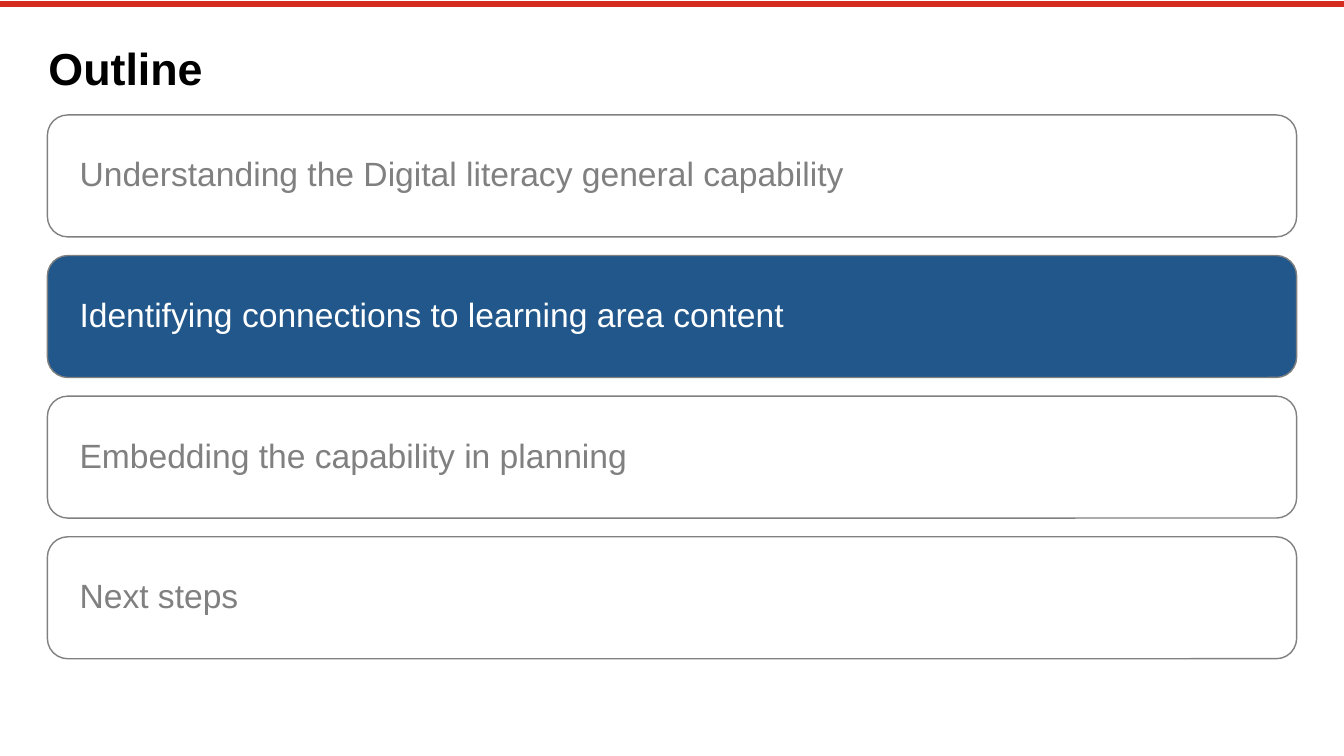
from lxml.etree import SubElement
from pptx import Presentation
from pptx.dml.color import RGBColor
from pptx.enum.shapes import MSO_CONNECTOR, MSO_SHAPE
from pptx.enum.text import MSO_ANCHOR, PP_ALIGN
from pptx.oxml.ns import qn
from pptx.util import Inches, Pt

RED = RGBColor(0xD5, 0x2B, 0x1E)
BLUE = RGBColor(0x21, 0x57, 0x8A)
GREY = RGBColor(0x80, 0x80, 0x80)
WHITE = RGBColor(0xFF, 0xFF, 0xFF)
BLACK = RGBColor(0, 0, 0)

WIDTH = 13.33
TOPICS = [
    "Understanding the Digital literacy general capability",
    "Identifying connections to learning area content",
    "Embedding the capability in planning",
    "Next steps",
]
ACTIVE = 1
TOP, STEP = 1.14, 1.395

TITLE = {"name": "Arial", "size": Pt(32), "bold": True}
LABEL = {"name": "Arial", "size": Pt(24)}
FLUSH = {"margin_left": 0, "margin_right": 0, "margin_top": 0,
         "margin_bottom": 0, "word_wrap": True}
INSET = {"margin_left": Inches(0.26), "margin_right": Inches(0.16),
         "vertical_anchor": MSO_ANCHOR.MIDDLE, "word_wrap": True}


def apply(target, values):
    """Set each named value on the target."""
    for name, value in values.items():
        setattr(target, name, value)


def write(shape, text, frame, font, color):
    """Put one left-aligned line of text in a shape."""
    apply(shape.text_frame, frame)
    para = shape.text_frame.paragraphs[0]
    para.text = text
    para.alignment = PP_ALIGN.LEFT
    apply(para.font, font)
    para.font.color.rgb = color
    return para


def add_rule(slide):
    """Draw the red line across the top."""
    y = Inches(0.04)
    rule = slide.shapes.add_connector(
        MSO_CONNECTOR.STRAIGHT, 0, y, Inches(WIDTH), y)
    rule.line.color.rgb = RED
    rule.line.width = Pt(4.2)
    SubElement(rule._element.spPr, qn("a:effectLst"))


def add_title(slide, text):
    """Add the slide heading."""
    box = slide.shapes.add_textbox(
        Inches(0.48), Inches(0.4), Inches(12.39), Inches(0.52))
    write(box, text, FLUSH, TITLE, BLACK)


def add_topic(slide, top, text, active):
    """Add one rounded bar, filled when it is the active topic."""
    bar = slide.shapes.add_shape(
        MSO_SHAPE.ROUNDED_RECTANGLE,
        Inches(0.47), Inches(top), Inches(12.39), Inches(1.21))
    bar.shadow.inherit = False
    bar.fill.solid()
    bar.fill.fore_color.rgb = BLUE if active else WHITE
    bar.line.color.rgb = GREY
    bar.line.width = Pt(1)
    para = write(bar, text, INSET, LABEL, WHITE if active else GREY)
    para.line_spacing = 0.9


def main():
    """Build and save the outline slide."""
    deck = Presentation()
    apply(deck, {"slide_width": Inches(WIDTH), "slide_height": Inches(7.5)})
    slide = deck.slides.add_slide(deck.slide_layouts[6])
    add_rule(slide)
    for row, topic in enumerate(TOPICS):
        add_topic(slide, TOP + row * STEP, topic, row == ACTIVE)
    add_title(slide, "Outline")
    deck.save("out.pptx")


if __name__ == "__main__":
    main()
